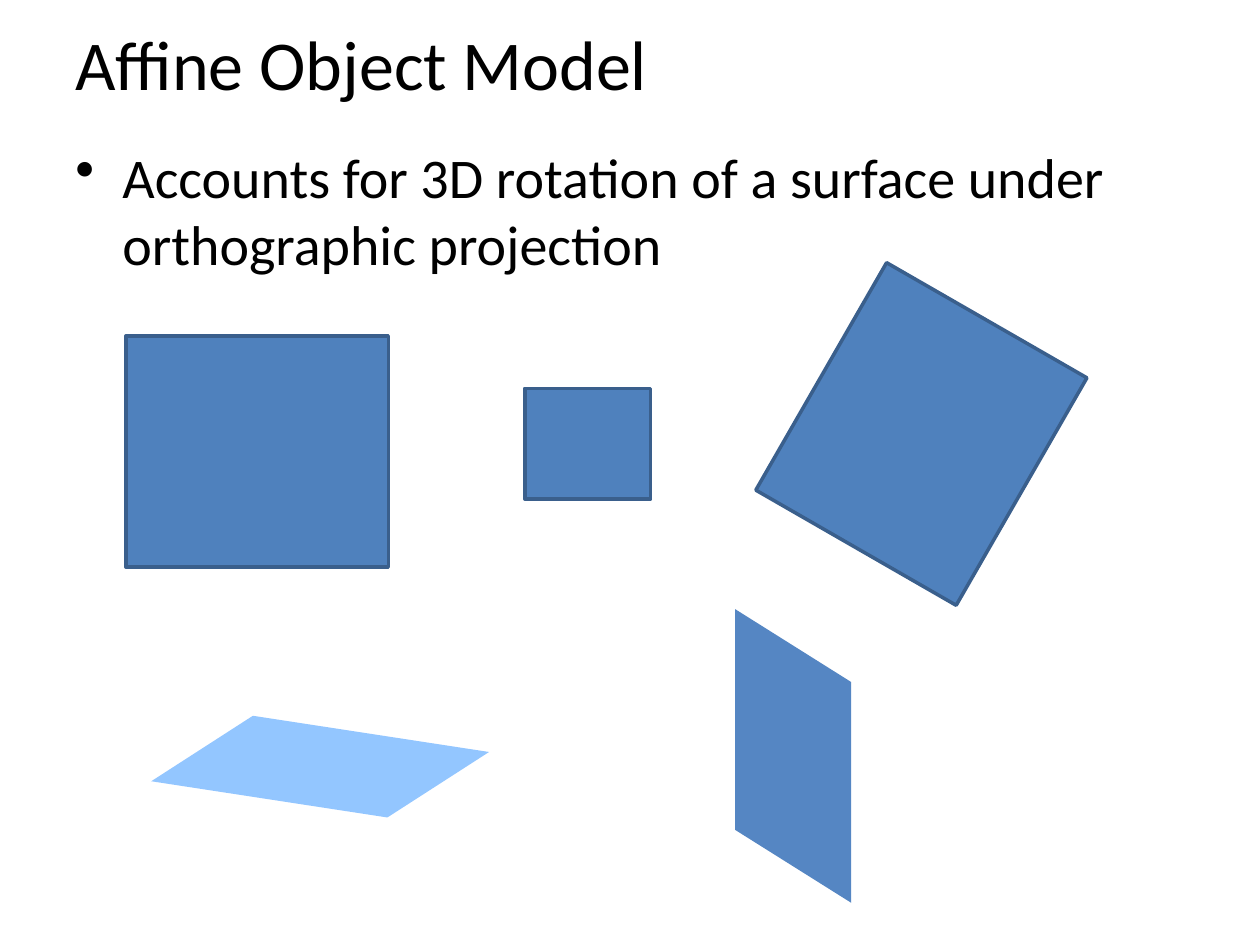
import pptx
import pptx.util
import pptx.dml.color
import pptx.enum.shapes
import pptx.enum.text
import pptx.oxml
import pptx.oxml.ns
from dataclasses import dataclass
from pptx.util import Cm

BLUE, EDGE = "4F81BD", "3A5F8C"
SIDE_W, SIDE_H = 5.29, 4.66  # the untransformed surface, in cm


@dataclass
class Surface:
    """Rectangle seen face on; lengths in cm."""
    x: float
    y: float
    w: float = SIDE_W
    h: float = SIDE_H
    rotation: float = 0


@dataclass
class Projection:
    """Parallelogram given by a corner and its two edge vectors, in cm."""
    corner: tuple[float, float]
    u: tuple[float, float]
    v: tuple[float, float]
    fill: str


def rgb(value: str) -> pptx.dml.color.RGBColor:
    return pptx.dml.color.RGBColor.from_string(value)


def add_text(s, text: str, y: float, h: float, size: int, anchor):
    tf = s.shapes.add_textbox(Cm(1.27), Cm(y), Cm(22.86), Cm(h)).text_frame
    tf.word_wrap = True
    tf.vertical_anchor = anchor
    p = tf.paragraphs[0]
    p.text = text
    p.font.name = "Calibri"
    p.font.size = pptx.util.Pt(size)
    p.font.color.rgb = rgb("000000")
    return p


def add_bullet(p, indent: float) -> None:
    pPr = p._p.get_or_add_pPr()
    pPr.set("marL", str(Cm(indent)))
    pPr.set("indent", str(-Cm(indent)))
    bullet = pptx.oxml.parse_xml(
        f'<a:buChar {pptx.oxml.ns.nsdecls("a")} char="•"/>')
    pPr.insert_element_before(bullet, "a:tabLst", "a:defRPr", "a:extLst")


def paint(sp, fill: str) -> None:
    sp.shadow.inherit = False
    sp.fill.solid()
    sp.fill.fore_color.rgb = rgb(fill)


def draw_surface(s, item: Surface) -> None:
    sp = s.shapes.add_shape(pptx.enum.shapes.MSO_SHAPE.RECTANGLE,
                            Cm(item.x), Cm(item.y), Cm(item.w), Cm(item.h))
    sp.rotation = item.rotation
    paint(sp, BLUE)
    sp.line.color.rgb = rgb(EDGE)
    sp.line.width = pptx.util.Pt(2)


def draw_projection(s, item: Projection) -> None:
    (x, y), (ux, uy), (vx, vy) = item.corner, item.u, item.v
    builder = s.shapes.build_freeform(Cm(x), Cm(y))
    builder.add_line_segments([
        (Cm(x + ux), Cm(y + uy)),
        (Cm(x + ux + vx), Cm(y + uy + vy)),
        (Cm(x + vx), Cm(y + vy)),
    ], close=True)
    sp = builder.convert_to_shape()
    paint(sp, item.fill)
    sp.line.fill.background()


SURFACES = [
    Surface(2.54, 6.77),
    Surface(15.93, 6.42, rotation=299.9),
    Surface(10.58, 7.83, 2.54, 2.23),
]
PROJECTIONS = [
    Projection((3.05, 15.75), (2.05, -1.32), (4.76, 0.73), "93C6FF"),
    Projection((14.82, 12.28), (2.34, 1.47), (0, 4.45), "5586C3"),
]


def main() -> None:
    prs = pptx.Presentation()
    prs.slide_width, prs.slide_height = Cm(25.4), Cm(19.05)
    s = prs.slides.add_slide(prs.slide_layouts[6])

    # Title and statement
    anchors = pptx.enum.text.MSO_ANCHOR
    add_text(s, "Affine Object Model", 0, 2.54, 40, anchors.MIDDLE)
    p = add_text(s, "Accounts for 3D rotation of a surface under "
                 "orthographic projection", 2.75, 14.27, 32, anchors.TOP)
    add_bullet(p, 0.95)

    # Original, rotated and scaled surfaces
    for item in SURFACES:
        draw_surface(s, item)

    # Surfaces turned in 3D
    for item in PROJECTIONS:
        draw_projection(s, item)

    prs.save("out.pptx")


if __name__ == "__main__":
    main()
